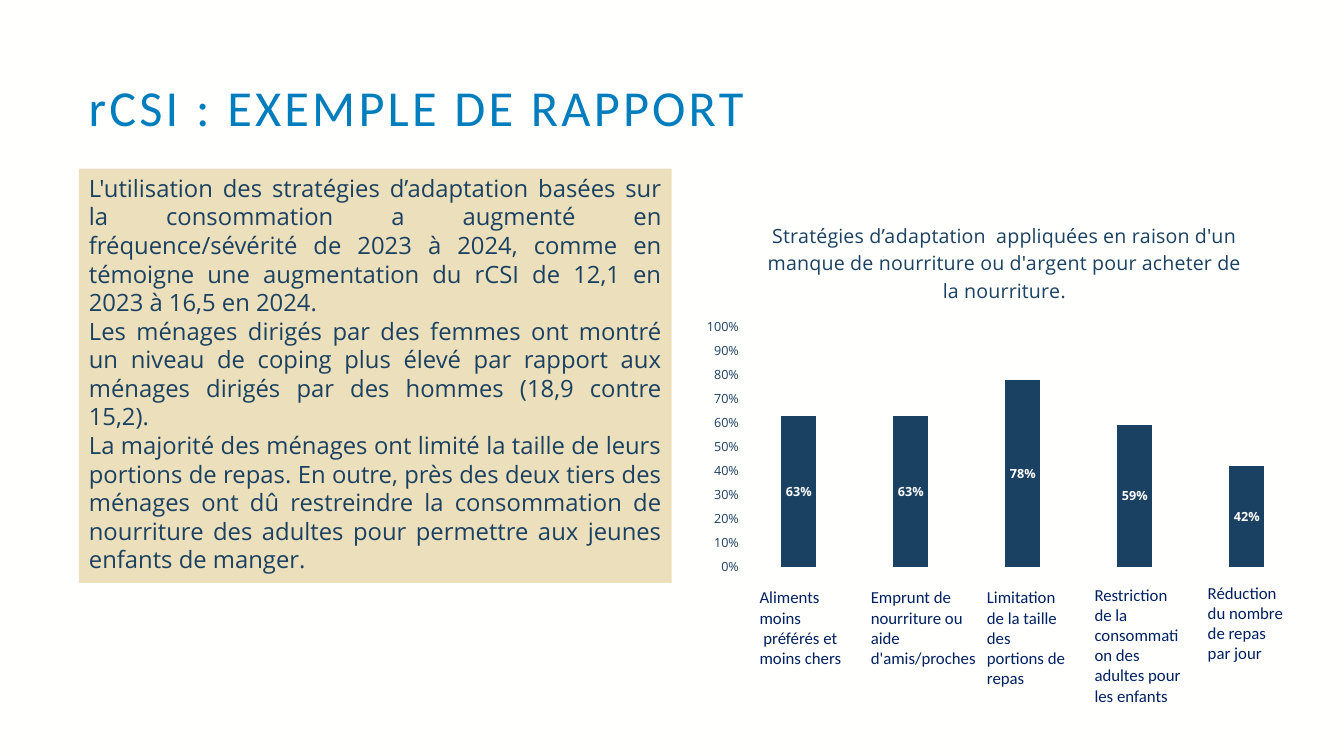
from dataclasses import dataclass

from pptx import Presentation
from pptx.chart.data import CategoryChartData
from pptx.dml.color import RGBColor
from pptx.enum.chart import XL_CHART_TYPE, XL_LABEL_POSITION, XL_TICK_MARK
from pptx.enum.shapes import MSO_SHAPE
from pptx.enum.text import MSO_ANCHOR, PP_ALIGN
from pptx.oxml import parse_xml
from pptx.oxml.ns import nsdecls, qn
from pptx.util import Pt


@dataclass(frozen=True)
class Theme:
    """Colours, fonts and type sizes of the slide."""
    paper: str = "FFFFFE"
    blue: str = "007DBC"
    navy: str = "1A4161"
    label: str = "002060"
    sand: str = "ECDFBB"
    head_font: str = "Calibri"
    body_font: str = "Open Sans"
    title: float = 36
    body: float = 17
    chart_title: float = 14
    caption: float = 12
    chart: float = 10
    value: float = 9


def set_font(font, size, color, name, bold=False):
    """Set size, colour, typeface and weight of a font."""
    font.size, font.name, font.bold = Pt(size), name, bold
    font.color.rgb = RGBColor.from_string(color)


def write(tf, text, size, color, font, align=PP_ALIGN.LEFT, line=1.0,
          spacing=0, anchor=MSO_ANCHOR.TOP):
    """Fill a text frame with one paragraph for each line of text."""
    tf.word_wrap = True
    tf.vertical_anchor = anchor
    for i, words in enumerate(text.split("\n")):
        p = tf.add_paragraph() if i else tf.paragraphs[0]
        p.alignment, p.line_spacing = align, line
        r = p.add_run()
        r.text = words
        set_font(r.font, size, color, font)
        if spacing:
            r._r.get_or_add_rPr().set("spc", str(round(spacing * 100)))


def place(parent, index, box, inner=False, **edges):
    """Give a chart part a manual layout, in points from the chart corner."""
    for old in parent.findall(qn("c:layout")):
        parent.remove(old)
    total = {"x": box[2], "w": box[2], "y": box[3], "h": box[3]}
    target = '<c:layoutTarget val="inner"/>' if inner else ""
    modes = "".join(f'<c:{k}Mode val="edge"/>' for k in "xy")
    values = "".join(f'<c:{k} val="{v / total[k]}"/>' for k, v in edges.items())
    parent.insert(index, parse_xml(
        f'<c:layout {nsdecls("c")}><c:manualLayout>{target}{modes}{values}'
        "</c:manualLayout></c:layout>"))


class Deck:
    """Holds the theme and the current slide."""

    def __init__(self, prs, theme):
        """Add a blank slide with the theme background."""
        self.t = theme
        self.s = prs.slides.add_slide(prs.slide_layouts[6])
        fill = self.s.background.fill
        fill.solid()
        fill.fore_color.rgb = RGBColor.from_string(theme.paper)

    def text(self, box, text, **fmt):
        """Add a text box."""
        tb = self.s.shapes.add_textbox(*map(Pt, box))
        write(tb.text_frame, text, **fmt)

    def panel(self, box, text, fill, **fmt):
        """Add a filled rectangle with text."""
        sp = self.s.shapes.add_shape(MSO_SHAPE.RECTANGLE, *map(Pt, box))
        sp.shadow.inherit = False
        sp.fill.solid()
        sp.fill.fore_color.rgb = RGBColor.from_string(fill)
        sp.line.fill.background()
        write(sp.text_frame, text, **fmt)

    def columns(self, box, title, values):
        """Add a column chart of percentages."""
        t = self.t
        data = CategoryChartData(number_format="0%")
        data.categories = [str(i) for i in range(1, len(values) + 1)]
        data.add_series("Series 1", values)
        chart = self.s.shapes.add_chart(
            XL_CHART_TYPE.COLUMN_CLUSTERED, *map(Pt, box), data).chart
        set_font(chart.font, t.chart, t.navy, t.body_font)
        chart.has_legend = False

        chart.has_title = True
        write(chart.chart_title.text_frame, title, size=t.chart_title,
              color=t.navy, font=t.body_font, align=PP_ALIGN.CENTER)
        place(chart.chart_title._element, 1, box, x=49.7, y=9.4)
        place(chart._chartSpace.chart.plotArea, 0, box, inner=True,
              x=34.5, y=88.3, w=400, h=171.4)

        chart.category_axis.visible = False
        axis = chart.value_axis
        axis.minimum_scale, axis.maximum_scale, axis.major_unit = 0, 1, 0.1
        axis.has_major_gridlines = False
        axis.major_tick_mark = axis.minor_tick_mark = XL_TICK_MARK.NONE
        axis.format.line.fill.background()
        axis.tick_labels.number_format = "0%"
        axis.tick_labels.number_format_is_linked = False
        set_font(axis.tick_labels.font, t.value, t.navy, t.body_font)

        plot = chart.plots[0]
        plot.gap_width, plot.overlap, plot.vary_by_categories = 219, -27, False
        fill = plot.series[0].format.fill
        fill.solid()
        fill.fore_color.rgb = RGBColor.from_string(t.navy)
        labels = plot.series[0].data_labels
        labels.show_value = True
        labels.position = XL_LABEL_POSITION.CENTER
        labels.number_format, labels.number_format_is_linked = "0%", False
        set_font(labels.font, t.value, t.paper, t.body_font, bold=True)


FINDINGS = "\n".join([
    "L'utilisation des stratégies d’adaptation basées sur la consommation a "
    "augmenté en fréquence/sévérité de 2023 à 2024, comme en témoigne une "
    "augmentation du rCSI de 12,1 en 2023 à 16,5 en 2024.",
    "Les ménages dirigés par des femmes ont montré un niveau de coping plus "
    "élevé par rapport aux ménages dirigés par des hommes (18,9 contre 15,2).",
    "La majorité des ménages ont limité la taille de leurs portions de repas. "
    "En outre, près des deux tiers des ménages ont dû restreindre la "
    "consommation de nourriture des adultes pour permettre aux jeunes enfants "
    "de manger.",
])
CHART_TITLE = ("Stratégies d’adaptation  appliquées en raison d'un manque de "
               "nourriture ou d'argent pour acheter de la nourriture.")
STRATEGIES = [
    (0.63, (535.5, 415.8, 74.2, 65.5),
     "Aliments moins\n préférés et\nmoins chers"),
    (0.63, (614.9, 415.8, 92.9, 65.5),
     "Emprunt de nourriture ou aide d'amis/proches"),
    (0.78, (697.9, 415.8, 74.2, 80),
     "Limitation de la taille des portions de repas"),
    (0.59, (774.7, 414, 76, 108.7),
     "Restriction de la consommation des adultes pour les enfants"),
    (0.42, (855.6, 412.6, 74.2, 65.5),
     "Réduction du nombre de repas par jour"),
]


def main():
    """Build and save the slide."""
    prs = Presentation()
    prs.slide_width, prs.slide_height = Pt(960), Pt(540)
    t = Theme()
    deck = Deck(prs, t)
    deck.text((56.2, 53, 870.5, 51.8), "rCSI : EXEMPLE DE RAPPORT",
              size=t.title, color=t.blue, font=t.head_font, line=0.9,
              spacing=2.3, anchor=MSO_ANCHOR.MIDDLE)
    deck.panel((56.4, 120.4, 423.4, 295.9), FINDINGS, t.sand, size=t.body,
               color=t.navy, font=t.body_font, align=PP_ALIGN.JUSTIFY)
    deck.columns((496.1, 145.4, 443.5, 270.7), CHART_TITLE,
                 [value for value, _, _ in STRATEGIES])
    for _, box, name in STRATEGIES:
        deck.text(box, name, size=t.caption, color=t.label, font=t.head_font)
    prs.save("out.pptx")


if __name__ == "__main__":
    main()
